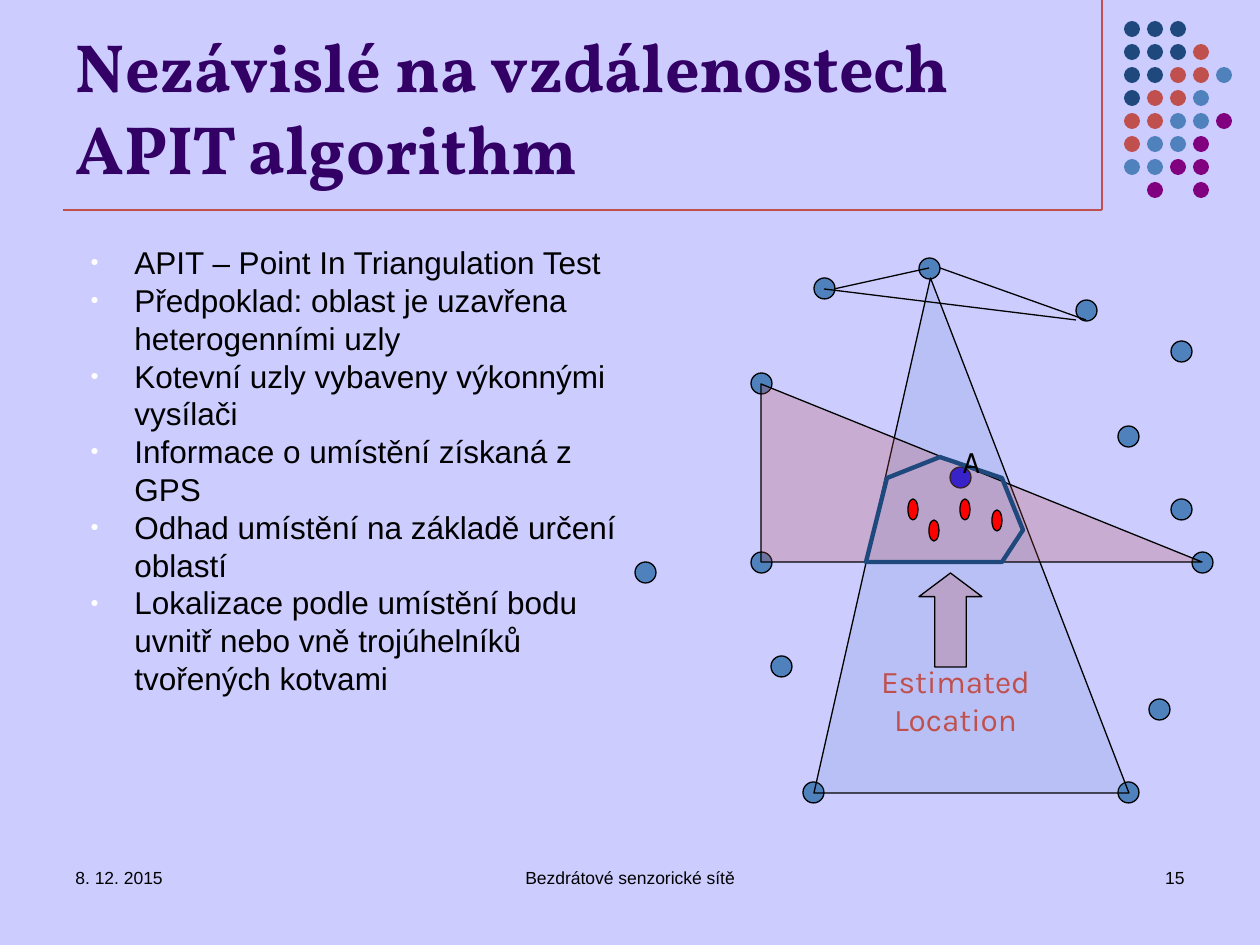
from lxml import etree
from pptx import Presentation
from pptx.dml.color import RGBColor
from pptx.enum.shapes import MSO_CONNECTOR, MSO_SHAPE as SHAPE
from pptx.enum.text import MSO_ANCHOR, MSO_AUTO_SIZE, PP_ALIGN as ALIGN
from pptx.oxml.ns import qn
from pptx.util import Emu, Pt

SCALE = 914400 / 126

LAVENDER = RGBColor(0xCC, 0xCC, 0xFF)
PURPLE = RGBColor(0x33, 0x00, 0x66)
NAVY = RGBColor(0x1F, 0x49, 0x7D)
RED = RGBColor(0xC0, 0x50, 0x4D)
BLUE = RGBColor(0x4F, 0x81, 0xBD)
VIOLET = RGBColor(0x80, 0x00, 0x80)
PURE_BLUE = RGBColor(0x00, 0x00, 0xFF)
PURE_RED = RGBColor(0xFF, 0x00, 0x00)
BLACK = RGBColor(0, 0, 0)

DOT_COLORS = {"N": NAVY, "R": RED, "B": BLUE, "V": VIOLET}
DOT_ROWS = ["NNN", "NNNR", "NNRRB", "NRRB", "RRBBV", "RBBV", "BBVV", "-V-V"]

BULLETS = [
    "APIT – Point In Triangulation Test",
    "Předpoklad: oblast je uzavřena heterogenními uzly",
    "Kotevní uzly vybaveny výkonnými vysílači",
    "Informace o umístění získaná z GPS",
    "Odhad umístění na základě určení oblastí",
    "Lokalizace podle umístění bodu uvnitř nebo vně trojúhelníků tvořených kotvami",
]

# Left and top of each anchor node, below and above the triangles
NODE = 21
BACK_NODES = [(919, 258), (751, 373), (751, 552), (803, 782),
              (1118, 782), (1192, 552), (1076, 300), (771, 656)]
FRONT_NODES = [(814, 278), (1118, 426), (1171, 341), (1171, 499),
               (635, 562), (1149, 699)]
TARGETS = [(908, 499), (929, 520), (960, 499), (992, 510)]
REGION = [(940, 457), (1002, 478), (1023, 530), (1002, 562),
          (866, 562), (887, 478)]
LINKS = [(824, 289, 1076, 320), (834, 289, 929, 268), (940, 268, 1086, 320)]


def px(n):
    return Emu(round(n * SCALE))


def style(sp, fill=None, line=BLACK, width=0.75, alpha=None):
    sp.shadow.inherit = False
    if fill is None:
        sp.fill.background()
    else:
        sp.fill.solid()
        sp.fill.fore_color.rgb = fill
    if alpha is not None:
        clr = sp.fill._xPr.find(qn("a:solidFill"))[0]
        etree.SubElement(clr, qn("a:alpha")).set("val", str(alpha * 1000))
    if line is None:
        sp.line.fill.background()
    else:
        sp.line.color.rgb = line
        sp.line.width = Pt(width)


def add_shape(s, kind, box, fill, adj=(), **look):
    sp = s.shapes.add_shape(kind, *map(px, box))
    for i, value in enumerate(adj):
        sp.adjustments[i] = value
    style(sp, fill, **look)


def add_nodes(s, places, fill=BLUE, width=NODE):
    for x, y in places:
        add_shape(s, SHAPE.OVAL, (x, y, width, NODE), fill)


def add_line(s, x1, y1, x2, y2, color=BLACK):
    c = s.shapes.add_connector(MSO_CONNECTOR.STRAIGHT, px(x1), px(y1), px(x2), px(y2))
    c.line.color.rgb = color
    c.line.width = Pt(0.75)
    etree.SubElement(c._element.spPr, qn("a:effectLst"))


def add_region(s):
    fb = s.shapes.build_freeform(*REGION[0], scale=SCALE)
    fb.add_line_segments(REGION[1:], close=True)
    style(fb.convert_to_shape(), line=NAVY, width=2.5)


def write(tf, lines, size, font, color, align=ALIGN.LEFT, bold=False):
    tf.word_wrap = True
    tf.auto_size = MSO_AUTO_SIZE.NONE
    for i, text in enumerate(lines):
        p = tf.add_paragraph() if i else tf.paragraphs[0]
        p.alignment = align
        r = p.add_run()
        r.text = text
        r.font.size = Pt(size)
        r.font.name = font
        r.font.bold = bold
        r.font.color.rgb = color


def add_text(s, box, lines, *args, **kwargs):
    tf = s.shapes.add_textbox(*map(px, box)).text_frame
    write(tf, lines, *args, **kwargs)
    return tf


def set_bullet(p):
    pPr = p._p.get_or_add_pPr()
    pPr.set("marL", str(px(59)))
    pPr.set("indent", str(px(-44)))
    clr = etree.SubElement(pPr, qn("a:buClr"))
    etree.SubElement(clr, qn("a:srgbClr")).set("val", "FFFFFF")
    etree.SubElement(pPr, qn("a:buSzPct")).set("val", "45000")
    etree.SubElement(pPr, qn("a:buFont")).set("typeface", "Arial")
    etree.SubElement(pPr, qn("a:buChar")).set("char", "●")


def add_decoration(s):
    add_line(s, 1102, 0, 1102, 210, RED)
    for row, colors in enumerate(DOT_ROWS):
        for col, key in enumerate(colors):
            if key in DOT_COLORS:
                box = (1124 + 23 * col, 21 + 23 * row, 16, 16)
                add_shape(s, SHAPE.OVAL, box, DOT_COLORS[key], line=None)
    add_line(s, 63, 210, 1102, 210, RED)


def add_title(s):
    sp = s.shapes.title
    sp.left, sp.top, sp.width, sp.height = map(px, (63, 16, 1039, 178))
    sp.text_frame.vertical_anchor = MSO_ANCHOR.BOTTOM
    write(sp.text_frame, ["Nezávislé na vzdálenostech", "APIT algorithm"],
          39, "Vollkorn", PURPLE, bold=True)


def add_diagram(s):
    add_nodes(s, BACK_NODES)
    add_nodes(s, [(950, 467)], PURE_BLUE)
    # Overlapping triangles
    add_shape(s, SHAPE.ISOSCELES_TRIANGLE, (814, 278, 315, 515), BLUE, [0.37], alpha=15)
    add_shape(s, SHAPE.RIGHT_TRIANGLE, (761, 384, 441, 178), RED, alpha=25)
    add_nodes(s, FRONT_NODES)
    # Estimated region and its label
    add_region(s)
    add_shape(s, SHAPE.UP_ARROW, (919, 573, 63, 94), RED, [0.5, 0.375], alpha=25)
    add_text(s, (845, 656, 221, 88), ["Estimated Location"], 18, "Karla", RED, ALIGN.CENTER)
    add_text(s, (950, 436, 42, 50), ["A"], 18, "Karla", BLACK, ALIGN.CENTER)
    add_nodes(s, TARGETS, PURE_RED, width=10)
    for link in LINKS:
        add_line(s, *link)


def main():
    prs = Presentation()
    prs.slide_width, prs.slide_height = px(1260), px(945)
    s = prs.slides.add_slide(prs.slide_layouts[5])
    s.background.fill.solid()
    s.background.fill.fore_color.rgb = LAVENDER

    add_decoration(s)
    add_title(s)

    # Bulleted body
    tf = add_text(s, (63, 237, 572, 607), BULLETS, 18, "Arial", BLACK)
    for p in tf.paragraphs:
        set_bullet(p)

    # Footer
    for x, width, text, align in [
        (63, 294, "8. 12. 2015", ALIGN.LEFT),
        (431, 398, "Bezdrátové senzorické sítě", ALIGN.CENTER),
        (903, 294, "15", ALIGN.RIGHT),
    ]:
        add_text(s, (x, 861, width, 63), [text], 10, "Arial", BLACK, align)

    add_diagram(s)
    prs.save("out.pptx")


if __name__ == "__main__":
    main()
